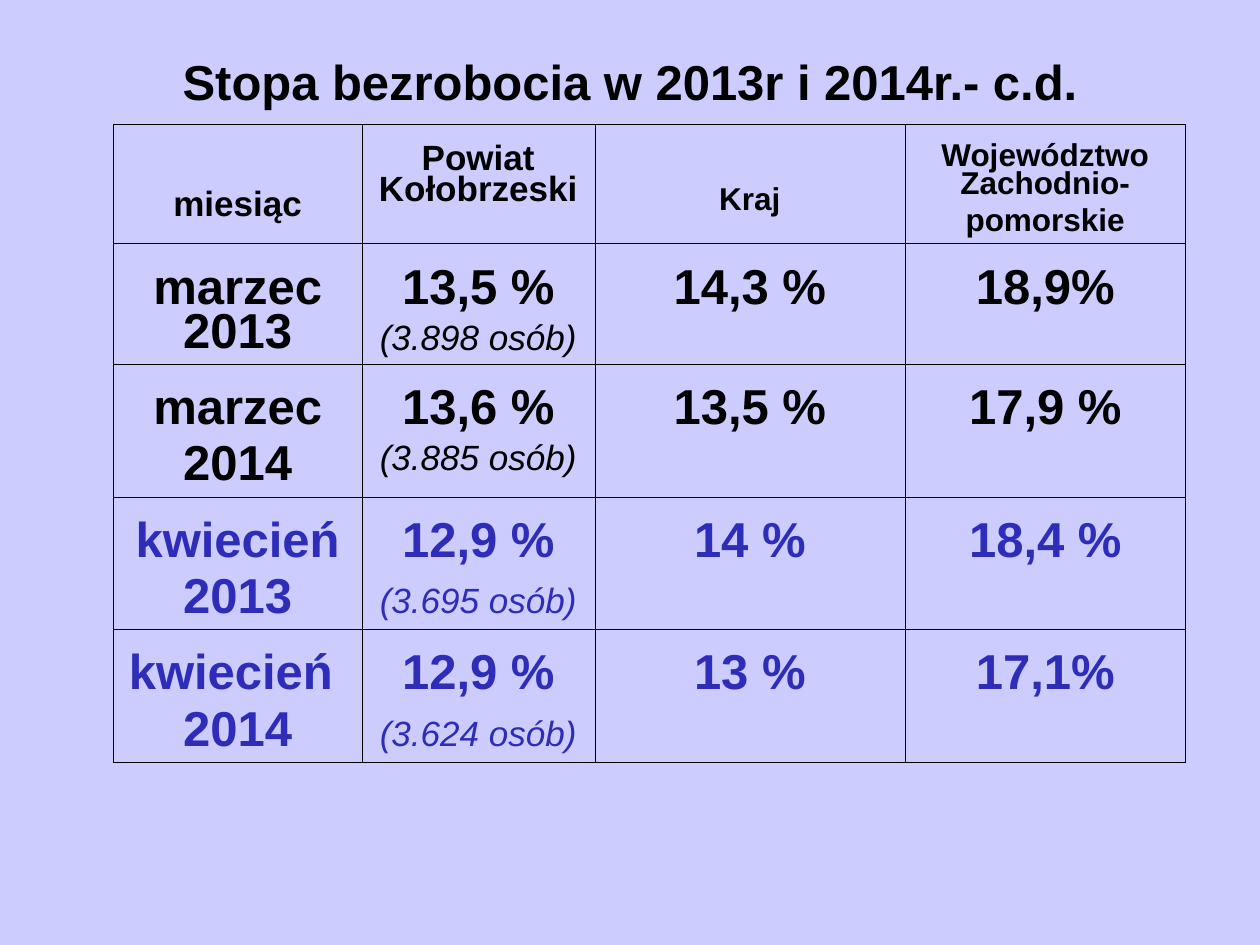
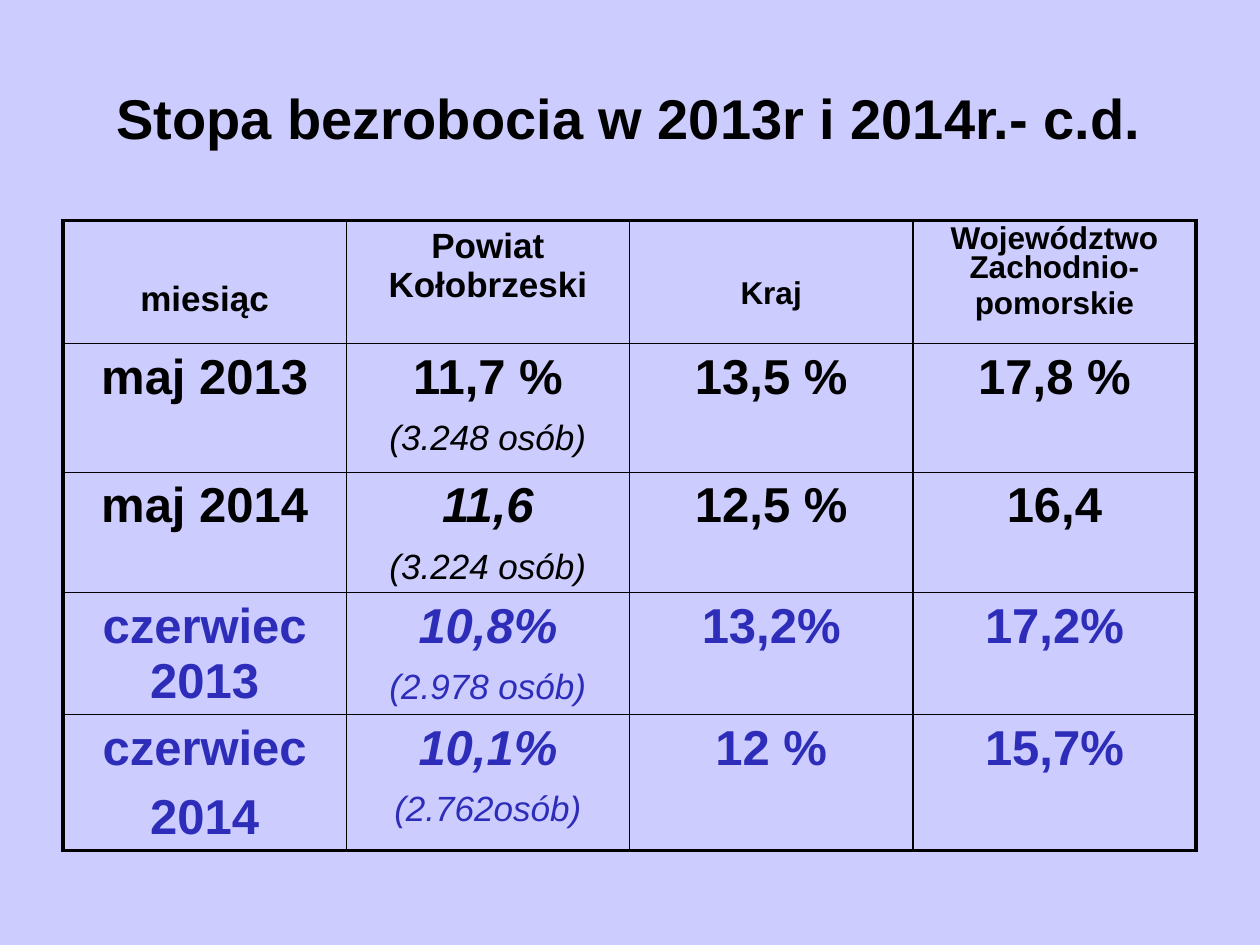
"""Builds two slides that compare unemployment rates in tables."""
from collections import namedtuple

from lxml import etree
from pptx import Presentation
from pptx.dml.color import RGBColor
from pptx.enum.text import MSO_ANCHOR, MSO_AUTO_SIZE, PP_ALIGN
from pptx.oxml.ns import qn
from pptx.util import Cm, Pt

CENTER = PP_ALIGN.CENTER
MIDDLE = MSO_ANCHOR.MIDDLE
NO_FIT = MSO_AUTO_SIZE.NONE

COLORS = {"back": "CCCCFF", "text": "000000", "late": "2D2DB9"}
FONT = "Arial"
TITLE = "Stopa bezrobocia w 2013r i 2014r.- c.d."
HEADS = ["miesiąc", "Powiat Kołobrzeski", "Kraj", "Województwo Zachodnio-\npomorskie"]
HEAD_SIZES = [20, 20, 18, 18]
BODY_SIZE, NOTE_SIZE = 28, 20
TIGHT = 0.81

Style = namedtuple("Style", "size bold italic color")
Space = namedtuple("Space", "top line before")

SPRING = [
    ["marzec 2013", "13,5 %\n(3.898 osób)", "14,3 %", "18,9%"],
    ["marzec\n2014", "13,6 %\n(3.885 osób)", "13,5 %", "17,9 %"],
    ["kwiecień\n2013", "12,9 %\n(3.695 osób)", "14 %", "18,4 %"],
    ["kwiecień \n2014", "12,9 %\n(3.624 osób)", "13 %", "17,1%"],
]
SUMMER = [
    ["maj 2013", "11,7 %\n(3.248 osób)", "13,5 %", "17,8 %"],
    ["maj 2014", "11,6\n(3.224 osób)", "12,5 %", "16,4"],
    ["czerwiec 2013", "10,8%\n(2.978 osób)", "13,2%", "17,2%"],
    ["czerwiec\n2014", "10,1%\n(2.762osób)", "12 %", "15,7%"],
]


def set_font(para, style):
    """Formats all the text of a paragraph."""
    font = para.font
    font.name, font.size = FONT, Pt(style.size)
    font.bold, font.italic = style.bold, style.italic
    font.color.rgb = RGBColor.from_string(COLORS[style.color])


def add_slide(prs, box, size):
    """Adds a slide with its title in the given box."""
    slide = prs.slides.add_slide(prs.slide_layouts[5])
    title = slide.shapes.title
    title.left, title.top, title.width, title.height = map(Cm, box)
    frame = title.text_frame
    frame.text = TITLE
    frame.auto_size, frame.vertical_anchor = NO_FIT, MIDDLE
    frame.paragraphs[0].alignment = CENTER
    set_font(frame.paragraphs[0], Style(size, True, False, "text"))
    return slide


def add_grid(slide, left, top, widths, heights):
    """Adds a plain table and returns it."""
    frame = slide.shapes.add_table(len(heights), len(widths), Cm(left), Cm(top),
                                   Cm(sum(widths)), Cm(sum(heights)))
    table = frame.table
    table.first_row = table.horz_banding = False
    for col, width in zip(table.columns, widths):
        col.width = Cm(width)
    for row, height in zip(table.rows, heights):
        row.height = Cm(height)
    return table


def draw_lines(table, inner, outer):
    """Rules every cell, with its own width for the frame."""
    rows, cols = len(table.rows), len(table.columns)
    for r in range(rows):
        for c in range(cols):
            cell = table.cell(r, c)
            props = cell._tc.get_or_add_tcPr()
            edges = {"L": c == 0, "R": c == cols - 1, "T": r == 0, "B": r == rows - 1}
            for side, edge in edges.items():
                width = Pt(outer if edge else inner)
                line = etree.SubElement(props, qn("a:ln" + side), w=str(width))
                fill = etree.SubElement(line, qn("a:solidFill"))
                etree.SubElement(fill, qn("a:srgbClr"), val=COLORS["text"])
            cell.fill.background()


def fill_cell(cell, text, styles, space):
    """Writes one paragraph a line, each in its style."""
    cell.margin_top = Cm(space.top)
    cell.text = text
    for para, style in zip(cell.text_frame.paragraphs, styles):
        para.alignment = CENTER
        para.line_spacing, para.space_before = space.line, Pt(space.before)
        set_font(para, style)


def fill_heads(table, spaces):
    """Fills the header row."""
    for c, (text, size, space) in enumerate(zip(HEADS, HEAD_SIZES, spaces)):
        style = Style(size, True, False, "text")
        fill_cell(table.cell(0, c), text, [style] * 2, space)


def fill_body(table, data, space, slant=(), gaps=None):
    """Fills the months, with the later month in its own colour."""
    for r, row in enumerate(data, 1):
        color = "text" if r < 3 else "late"
        for c, text in enumerate(row):
            rate = Style(BODY_SIZE, True, c == 1 and r in slant, color)
            note = Style(NOTE_SIZE, False, True, color)
            before = (gaps or {}).get((r, c), space.before)
            fill_cell(table.cell(r, c), text, [rate, note if c == 1 else rate],
                      space._replace(before=before))


def add_spring(prs):
    """Adds the slide for March and April."""
    slide = add_slide(prs, (1.27, 0.76, 22.86, 1.75), 28)
    table = add_grid(slide, 2.29, 2.51, [5, 4.7, 6.25, 5.66], [2.4, 2.42, 2.68, 2.66, 2.68])
    draw_lines(table, 0.11, 0.23)
    fill_heads(table, [Space(top, TIGHT, 4.5) for top in (1.35, 0.41, 1.27, 0.38)])
    fill_body(table, SPRING, Space(0.51, TIGHT, 7), gaps={(3, 1): 12.7, (4, 1): 12.7})


def add_summer(prs):
    """Adds the slide for May and June."""
    slide = add_slide(prs, (1.27, 0.36, 22.83, 3.99), 32)
    table = add_grid(slide, 1.27, 4.44, [5.71] * 4, [2.48, 2.6, 2.42, 2.46, 2.74])
    draw_lines(table, 1, 2.25)
    heads = [Space(top, 1.0, 8) for top in (1.21, 0.13, 1.13)]
    fill_heads(table, heads + [Space(0.13, TIGHT, 4.5)])
    fill_body(table, SUMMER, Space(0.13, 1.0, 8), slant=(2, 3, 4))


def main():
    """Builds and saves the slides."""
    prs = Presentation()
    prs.slide_width, prs.slide_height = Cm(25.4), Cm(19.05)
    back = prs.slide_master.background.fill
    back.solid()
    back.fore_color.rgb = RGBColor.from_string(COLORS["back"])
    add_spring(prs)
    add_summer(prs)
    prs.save("out.pptx")


if __name__ == "__main__":
    main()
